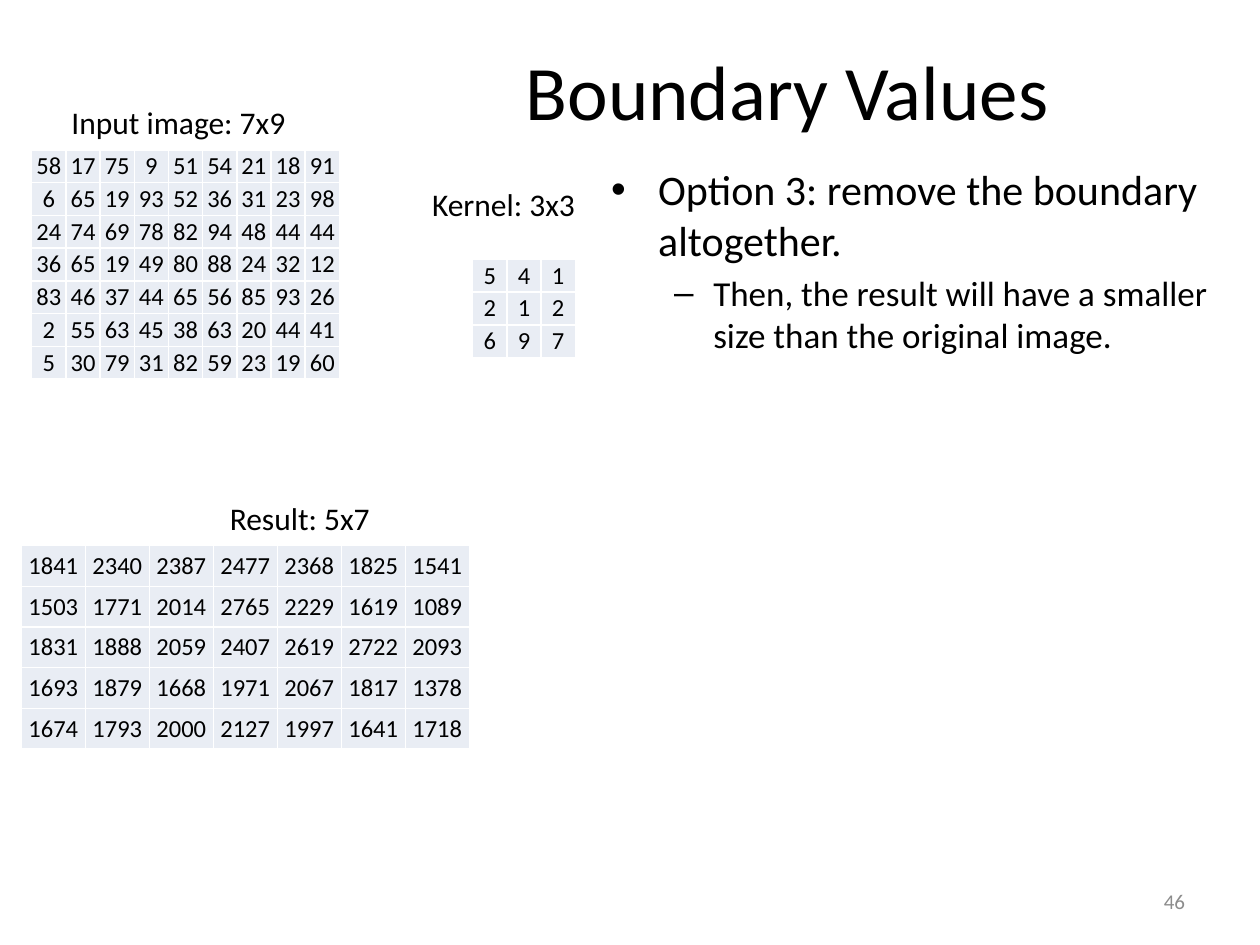
from dataclasses import dataclass
from typing import Any, Optional

from lxml.etree import SubElement
from pptx import Presentation
from pptx.dml.color import RGBColor
from pptx.enum.text import MSO_ANCHOR, MSO_AUTO_SIZE, PP_ALIGN
from pptx.oxml.ns import qn
from pptx.slide import Slide
from pptx.util import Cm, Length, Pt

BLACK = RGBColor(0x00, 0x00, 0x00)
GRAY = RGBColor(0x8C, 0x8C, 0x8C)
WHITE = RGBColor(0xFF, 0xFF, 0xFF)
CELL_FILL = RGBColor(0xE9, 0xED, 0xF4)
FONT = "Calibri"

CELL_FORMAT = {
    "vertical_anchor": MSO_ANCHOR.MIDDLE,
    "margin_left": 0,
    "margin_right": 0,
    "margin_top": 0,
    "margin_bottom": 0,
}
WRAPPED = {"word_wrap": True}
CENTERED_BLOCK = {"word_wrap": True, "vertical_anchor": MSO_ANCHOR.MIDDLE}
CAPTION = {"word_wrap": False, "auto_size": MSO_AUTO_SIZE.SHAPE_TO_FIT_TEXT}


@dataclass(frozen=True)
class Bullet:
    symbol: str
    margin: Length
    hanging: Length


@dataclass(frozen=True)
class Line:
    text: str
    size: int
    align: PP_ALIGN = PP_ALIGN.LEFT
    color: RGBColor = BLACK
    level: int = 0
    bullet: Optional[Bullet] = None


@dataclass(frozen=True)
class Block:
    left: float
    top: float
    width: float
    height: float
    frame_format: dict[str, Any]
    lines: tuple[Line, ...]


@dataclass(frozen=True)
class Matrix:
    left: float
    top: float
    column_width: float
    row_height: float
    values: str


BLOCKS = (
    Block(7.62, 0.43, 16.51, 2.74, CENTERED_BLOCK,
          (Line("Boundary Values", 44, PP_ALIGN.CENTER),)),
    Block(12.07, 3.18, 12.9, 14.4, WRAPPED, (
        Line("Option 3: remove the boundary altogether.", 24,
             bullet=Bullet("•", Cm(0.95), Cm(0.95))),
        Line("Then, the result will have a smaller size than the original image.",
             20, level=1, bullet=Bullet("–", Cm(2.06), Cm(0.79))),
    )),
    Block(18.21, 17.65, 5.93, 1.02, CENTERED_BLOCK,
          (Line("46", 12, PP_ALIGN.RIGHT, GRAY),)),
    Block(4.19, 9.93, 3.71, 1.02, CAPTION,
          (Line("Result: 5x7", 18, PP_ALIGN.CENTER),)),
    Block(0.97, 1.96, 5.26, 1.02, CAPTION,
          (Line("Input image: 7x9", 18, PP_ALIGN.CENTER),)),
    Block(8.46, 3.61, 3.43, 1.02, CAPTION, (Line("Kernel: 3x3", 18),)),
)

MATRICES = (
    Matrix(0.43, 11.0, 1.29, 0.82, """
        1841 2340 2387 2477 2368 1825 1541
        1503 1771 2014 2765 2229 1619 1089
        1831 1888 2059 2407 2619 2722 2093
        1693 1879 1668 1971 2067 1817 1378
        1674 1793 2000 2127 1997 1641 1718"""),
    Matrix(0.64, 3.02, 0.69, 0.66, """
        58 17 75 9 51 54 21 18 91
        6 65 19 93 52 36 31 23 98
        24 74 69 78 82 94 48 44 44
        36 65 19 49 80 88 24 32 12
        83 46 37 44 65 56 85 93 26
        2 55 63 45 38 63 20 44 41
        5 30 79 31 82 59 23 19 60"""),
    Matrix(9.53, 5.23, 0.69, 0.66, """
        5 4 1
        2 1 2
        6 9 7"""),
)


def apply_format(target: Any, values: dict[str, Any]) -> None:
    for attribute, value in values.items():
        setattr(target, attribute, value)


def write_line(paragraph: Any, line: Line) -> None:
    paragraph.alignment = line.align
    run = paragraph.add_run()
    run.text = line.text
    apply_format(run.font, {"name": FONT, "size": Pt(line.size)})
    run.font.color.rgb = line.color
    if line.bullet:
        apply_format(paragraph, {"level": line.level, "space_before": Pt(line.size * 0.2)})
        properties = paragraph._p.get_or_add_pPr()
        properties.set("marL", str(line.bullet.margin))
        properties.set("indent", str(-line.bullet.hanging))
        SubElement(properties, qn("a:buFont"), typeface="Arial")
        SubElement(properties, qn("a:buChar"), char=line.bullet.symbol)


def draw_block(slide: Slide, block: Block) -> None:
    frame = slide.shapes.add_textbox(
        Cm(block.left), Cm(block.top), Cm(block.width), Cm(block.height)
    ).text_frame
    apply_format(frame, block.frame_format)
    for index, line in enumerate(block.lines):
        write_line(frame.add_paragraph() if index else frame.paragraphs[0], line)


def draw_borders(cell: Any) -> None:
    properties = cell._tc.get_or_add_tcPr()
    for side in ("a:lnL", "a:lnR", "a:lnT", "a:lnB"):
        border = SubElement(properties, qn(side), w=str(Pt(1)))
        fill = SubElement(border, qn("a:solidFill"))
        SubElement(fill, qn("a:srgbClr"), val=str(WHITE))


def draw_matrix(slide: Slide, matrix: Matrix) -> None:
    rows = [row.split() for row in matrix.values.strip().splitlines()]
    row_count, column_count = len(rows), len(rows[0])
    table = slide.shapes.add_table(
        row_count, column_count, Cm(matrix.left), Cm(matrix.top),
        Cm(matrix.column_width * column_count), Cm(matrix.row_height * row_count),
    ).table
    apply_format(table, {"first_row": False, "horz_banding": False})
    for column in table.columns:
        column.width = Cm(matrix.column_width)
    for table_row, values in zip(table.rows, rows):
        table_row.height = Cm(matrix.row_height)
        for cell, value in zip(table_row.cells, values):
            apply_format(cell, CELL_FORMAT)
            draw_borders(cell)
            cell.fill.solid()
            cell.fill.fore_color.rgb = CELL_FILL
            write_line(cell.text_frame.paragraphs[0], Line(value, 14, PP_ALIGN.CENTER))


def main() -> None:
    presentation = Presentation()
    apply_format(presentation, {"slide_width": Cm(25.4), "slide_height": Cm(19.05)})
    slide = presentation.slides.add_slide(presentation.slide_layouts[6])
    for block in BLOCKS:
        draw_block(slide, block)
    for matrix in MATRICES:
        draw_matrix(slide, matrix)
    presentation.save("out.pptx")


if __name__ == "__main__":
    main()
